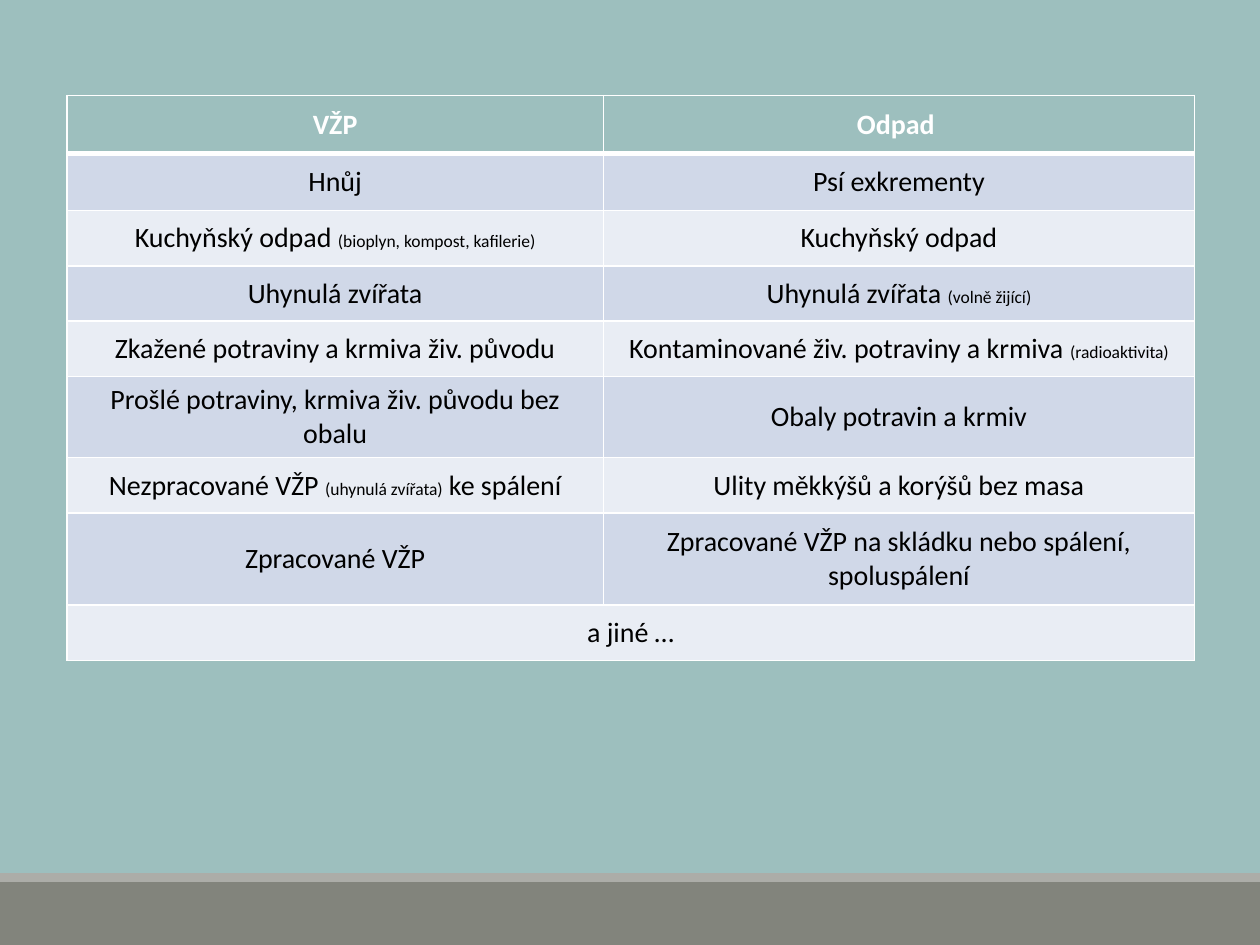
from lxml.etree import SubElement
from pptx import Presentation
from pptx.dml.color import RGBColor
from pptx.enum.shapes import MSO_SHAPE
from pptx.enum.text import MSO_ANCHOR, PP_ALIGN
from pptx.oxml.ns import qn
from pptx.util import Inches, Pt

TEAL = RGBColor(0x9D, 0xBF, 0xBE)
FOOTER_GREY = RGBColor(0x82, 0x84, 0x7C)
STRIPE_GREY = RGBColor(0xAC, 0xAD, 0xA8)
BAND_DARK = RGBColor(0xD0, 0xD8, 0xE8)
BAND_LIGHT = RGBColor(0xE9, 0xED, 0xF4)
WHITE = RGBColor(0xFF, 0xFF, 0xFF)
BLACK = RGBColor(0, 0, 0)

FONT = "Calibri"
TEXT_SIZE, NOTE_SIZE = Pt(16), Pt(10)
COLUMN_WIDTHS = [4.26, 4.69]
ROW_HEIGHTS = [0.46, 0.45] + [0.44] * 5 + [0.73, 0.44]

# Each cell is a list of spans; a span in brackets is a small note.
ROWS = [
    (["VŽP"], ["Odpad "]),
    (["Hnůj"], ["Psí exkrementy"]),
    (["Kuchyňský odpad ", "(bioplyn, kompost, kafilerie)"], ["Kuchyňský odpad"]),
    (["Uhynulá zvířata"], ["Uhynulá zvířata ", "(volně žijící)"]),
    (["Zkažené potraviny a krmiva živ. původu"],
     ["Kontaminované živ. potraviny a krmiva ", "(radioaktivita)"]),
    (["Prošlé potraviny, krmiva živ. původu bez obalu"], ["Obaly potravin a krmiv"]),
    (["Nezpracované VŽP ", "(uhynulá zvířata)", " ke spálení"],
     ["Ulity měkkýšů a korýšů bez masa"]),
    (["Zpracované VŽP"], ["Zpracované VŽP na skládku nebo spálení, spoluspálení"]),
    (["a jiné …"],),
]


def add_band(page, left, top, width, height, color):
    band = page.shapes.add_shape(MSO_SHAPE.RECTANGLE, left, top, width, height)
    band.shadow.inherit = False
    band.fill.solid()
    band.fill.fore_color.rgb = color
    band.line.fill.background()


def add_footer(page, left, top, width, height):
    stripe = Inches(0.07)
    add_band(page, left, top + stripe, width, height - stripe, FOOTER_GREY)
    add_band(page, left, top, width, stripe, STRIPE_GREY)


def set_borders(cell, row):
    """White rules, thicker between the heading and the first row."""
    points = {"L": 1, "R": 1, "T": 3 if row == 1 else 1, "B": 3 if row == 0 else 1}
    properties = cell._tc.get_or_add_tcPr()
    for side, width in points.items():
        line = SubElement(properties, qn(f"a:ln{side}"), w=str(Pt(width)))
        fill = SubElement(line, qn("a:solidFill"))
        SubElement(fill, qn("a:srgbClr"), val=str(WHITE))


def write_cell(cell, spans, heading):
    cell.vertical_anchor = MSO_ANCHOR.MIDDLE
    para = cell.text_frame.paragraphs[0]
    para.alignment = PP_ALIGN.CENTER
    para.font.name = FONT
    para.font.size = TEXT_SIZE
    for text in spans:
        span = para.add_run()
        span.text = text
        span.font.name = FONT
        span.font.size = NOTE_SIZE if text.startswith("(") else TEXT_SIZE
        span.font.bold = heading
        span.font.color.rgb = WHITE if heading else BLACK


def add_comparison(page, left, top, width, height):
    table = page.shapes.add_table(
        len(ROWS), len(COLUMN_WIDTHS), left, top, width, height).table
    for column, share in zip(table.columns, COLUMN_WIDTHS):
        column.width = int(width * share / sum(COLUMN_WIDTHS))
    for row, share in zip(table.rows, ROW_HEIGHTS):
        row.height = int(height * share / sum(ROW_HEIGHTS))

    for r, texts in enumerate(ROWS):
        color = TEAL if r == 0 else BAND_DARK if r % 2 else BAND_LIGHT
        for c in range(len(COLUMN_WIDTHS)):
            cell = table.cell(r, c)
            set_borders(cell, r)
            cell.fill.solid()
            cell.fill.fore_color.rgb = color
        for c, spans in enumerate(texts):
            write_cell(table.cell(r, c), spans, heading=r == 0)
    last = len(ROWS) - 1
    table.cell(last, 0).merge(table.cell(last, 1))


def main():
    deck = Presentation()
    deck.slide_width, deck.slide_height = Inches(10), Inches(7.5)
    page = deck.slides.add_slide(deck.slide_layouts[6])
    page.background.fill.solid()
    page.background.fill.fore_color.rgb = TEAL

    footer_height = Inches(0.57)
    add_footer(page, 0, deck.slide_height - footer_height,
               deck.slide_width, footer_height)
    add_comparison(page, Inches(0.53), Inches(0.76),
                   Inches(sum(COLUMN_WIDTHS)), Inches(sum(ROW_HEIGHTS)))
    deck.save("out.pptx")


if __name__ == "__main__":
    main()
